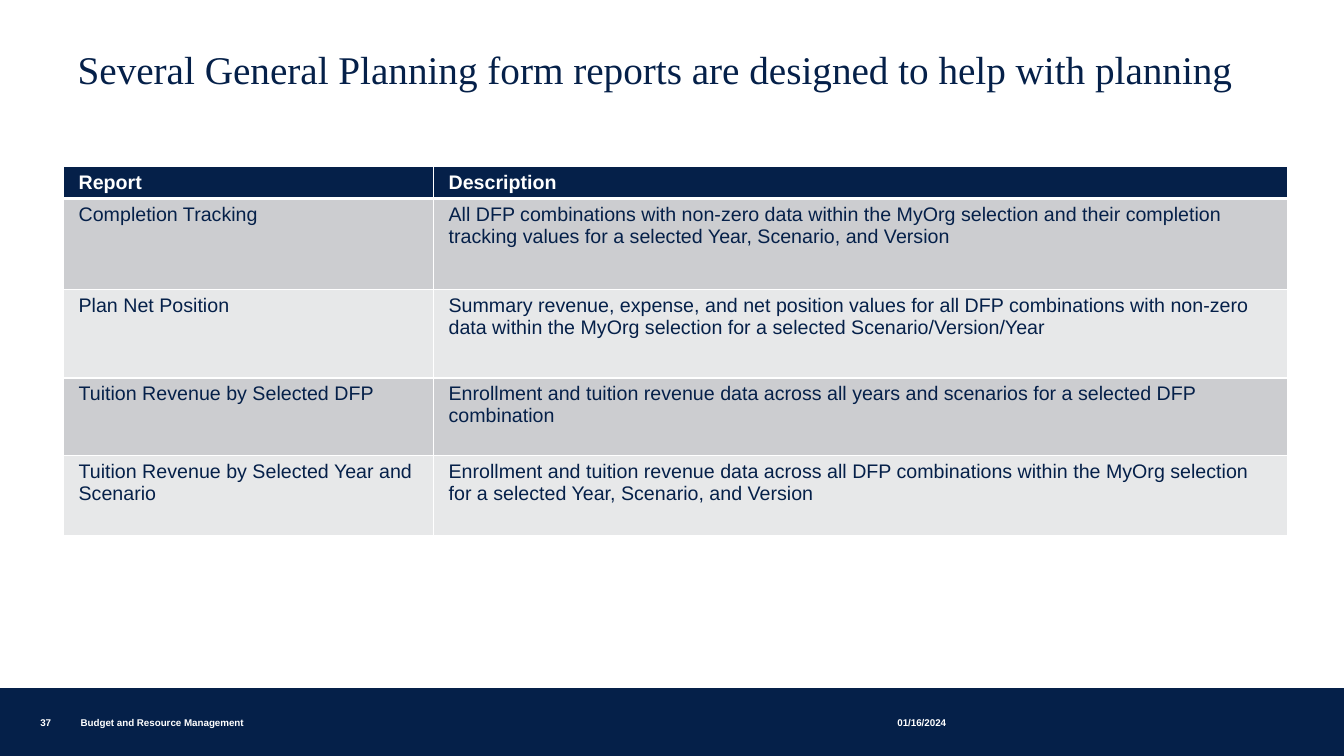
from typing import NamedTuple

from lxml import etree
from pptx import Presentation
from pptx.dml.color import RGBColor
from pptx.enum.shapes import MSO_SHAPE
from pptx.enum.text import MSO_ANCHOR, MSO_AUTO_SIZE, PP_ALIGN
from pptx.oxml.ns import qn
from pptx.util import Emu, Pt

RECTANGLE = MSO_SHAPE.RECTANGLE
LEFT = PP_ALIGN.LEFT
BOTTOM, MIDDLE, TOP = MSO_ANCHOR.BOTTOM, MSO_ANCHOR.MIDDLE, MSO_ANCHOR.TOP
NO_AUTOFIT = MSO_AUTO_SIZE.NONE

EMU_PER_PX = 9144  # 100 px to the inch
EMU_PER_POINT = 12700
SLIDE_WIDTH, SLIDE_HEIGHT = 1333, 750
NAVY, WHITE = "052049", "FFFFFF"
BAND_FILLS = ("CCCDD0", "E7E8E9")
SANS, SERIF = "Arial", "Times New Roman"


class Box(NamedTuple):
    left: int
    top: int
    width: int
    height: int


class FooterItem(NamedTuple):
    text: str
    box: Box


class TableRow(NamedTuple):
    height: int
    report: str
    description: str


TITLE = "Several General Planning form reports are designed to help with planning"
TITLE_BOX = Box(67, 47, 1180, 50)
FOOTER_BAND = Box(0, 684, SLIDE_WIDTH, 66)
TABLE_LEFT, TABLE_TOP = 63, 165
COLUMN_WIDTHS = (367, 847)
ROWS = (
    TableRow(32, "Report", "Description"),
    TableRow(90, "Completion Tracking",
             "All DFP combinations with non-zero data within the MyOrg selection and "
             "their completion tracking values for a selected Year, Scenario, and Version"),
    TableRow(88, "Plan Net Position",
             "Summary revenue, expense, and net position values for all DFP combinations "
             "with non-zero data within the MyOrg selection for a selected "
             "Scenario/Version/Year"),
    TableRow(77, "Tuition Revenue by Selected DFP",
             "Enrollment and tuition revenue data across all years and scenarios for a "
             "selected DFP combination"),
    TableRow(79, "Tuition Revenue by Selected Year and Scenario",
             "Enrollment and tuition revenue data across all DFP combinations within the "
             "MyOrg selection for a selected Year, Scenario, and Version"),
)
FOOTER_ITEMS = (
    FooterItem("37", Box(40, 706, 36, 17)),
    FooterItem("Budget and Resource Management", Box(80, 708, 629, 15)),
    FooterItem("01/16/2024", Box(890, 706, 135, 17)),
)


def px(length: int) -> Emu:
    return Emu(length * EMU_PER_PX)


def rgb(color: str) -> RGBColor:
    return RGBColor.from_string(color)


def set_margins(target, horizontal: int, vertical: int) -> None:
    target.margin_left = target.margin_right = px(horizontal)
    target.margin_top = target.margin_bottom = px(vertical)


def format_paragraph(paragraph, font_name: str, size: int, color: str,
                     bold: bool = False) -> None:
    paragraph.alignment = LEFT
    font = paragraph.font
    font.name, font.size, font.bold = font_name, Pt(size), bold
    font.color.rgb = rgb(color)


def add_title(slide) -> None:
    title = slide.shapes.title
    title.left, title.top, title.width, title.height = map(px, TITLE_BOX)
    frame = title.text_frame
    frame.text = TITLE
    frame.auto_size = NO_AUTOFIT
    frame.word_wrap = True
    frame.vertical_anchor = MIDDLE
    set_margins(frame, 10, 5)
    format_paragraph(frame.paragraphs[0], SERIF, 28, NAVY)
    frame.paragraphs[0].line_spacing = 0.85


def add_border(cell, side: str, points: int) -> None:
    properties = cell._tc.get_or_add_tcPr()
    line = etree.SubElement(properties, qn(f"a:ln{side}"), w=str(points * EMU_PER_POINT))
    fill = etree.SubElement(line, qn("a:solidFill"))
    etree.SubElement(fill, qn("a:srgbClr"), val=WHITE)


def format_cell(cell, text: str, row_index: int) -> None:
    is_header = row_index == 0
    cell.text = text
    cell.vertical_anchor = TOP
    set_margins(cell, 15, 5)
    format_paragraph(cell.text_frame.paragraphs[0], SANS, 14,
                     WHITE if is_header else NAVY, is_header)
    # Borders come before the fill in the cell properties.
    add_border(cell, "L", 1)
    add_border(cell, "R", 1)
    add_border(cell, "T", 3 if row_index == 1 else 1)
    add_border(cell, "B", 3 if is_header else 1)
    cell.fill.solid()
    cell.fill.fore_color.rgb = rgb(NAVY if is_header else BAND_FILLS[(row_index - 1) % 2])


def add_report_table(slide) -> None:
    box = Box(TABLE_LEFT, TABLE_TOP, sum(COLUMN_WIDTHS), sum(row.height for row in ROWS))
    table = slide.shapes.add_table(len(ROWS), len(COLUMN_WIDTHS), *map(px, box)).table
    for column, width in zip(table.columns, COLUMN_WIDTHS):
        column.width = px(width)
    for row_index, row in enumerate(ROWS):
        table.rows[row_index].height = px(row.height)
        for column_index, text in enumerate((row.report, row.description)):
            format_cell(table.cell(row_index, column_index), text, row_index)


def add_footer_band(slide) -> None:
    band = slide.shapes.add_shape(RECTANGLE, *map(px, FOOTER_BAND))
    band.shadow.inherit = False
    band.fill.solid()
    band.fill.fore_color.rgb = rgb(NAVY)
    band.line.color.rgb = rgb(NAVY)
    band.line.width = Pt(1.5)


def add_footer_item(slide, item: FooterItem) -> None:
    frame = slide.shapes.add_textbox(*map(px, item.box)).text_frame
    frame.text = item.text
    frame.word_wrap = True
    frame.vertical_anchor = BOTTOM
    set_margins(frame, 0, 0)
    format_paragraph(frame.paragraphs[0], SANS, 7, WHITE, bold=True)


def main() -> None:
    presentation = Presentation()
    presentation.slide_width, presentation.slide_height = px(SLIDE_WIDTH), px(SLIDE_HEIGHT)
    title_only = presentation.slide_layouts.get_by_name("Title Only")
    slide = presentation.slides.add_slide(title_only)
    add_footer_band(slide)
    add_title(slide)
    add_report_table(slide)
    for item in FOOTER_ITEMS:
        add_footer_item(slide, item)
    presentation.save("out.pptx")


if __name__ == "__main__":
    main()
